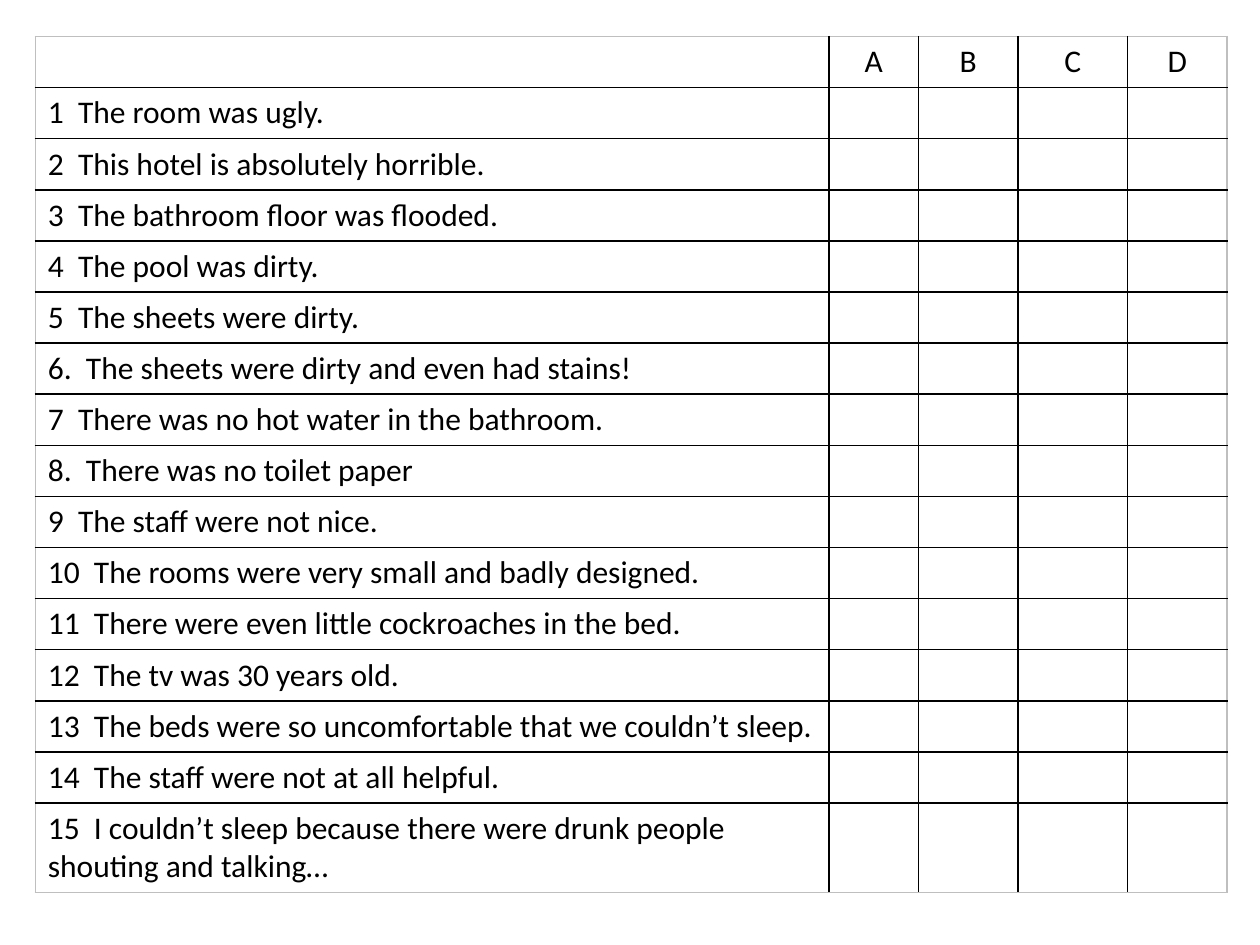
from dataclasses import dataclass

from lxml import etree
from pptx import Presentation
from pptx.dml.color import RGBColor
from pptx.enum import text
from pptx.oxml import ns
from pptx.util import Inches, Pt


@dataclass(frozen=True)
class Theme:
    """Hold the colours, font and sizes of the slide."""
    ink: str = "000000"
    frame: str = "BFBFBF"
    font: str = "Calibri"
    body: int = 18
    line: int = 1


THEME = Theme()
GUESTS = ["A", "B", "C", "D"]
COLUMN_WIDTHS = [6.3, 0.71, 0.79, 0.87, 0.79]
LAST_ROW_HEIGHT = 0.71
COMPLAINTS = [
    "1  The room was ugly.",
    "2  This hotel is absolutely horrible.",
    "3  The bathroom floor was flooded.",
    "4  The pool was dirty.",
    "5  The sheets were dirty.",
    "6.  The sheets were dirty and even had stains!",
    "7  There was no hot water in the bathroom.",
    "8.  There was no toilet paper",
    "9  The staff were not nice.",
    "10  The rooms were very small and badly designed.",
    "11  There were even little cockroaches in the bed.",
    "12  The tv was 30 years old.",
    "13  The beds were so uncomfortable that we couldn’t sleep.",
    "14  The staff were not at all helpful.",
    "15  I couldn’t sleep because there were drunk people shouting and talking…",
]


def write_cell(cell, words, align=text.PP_ALIGN.LEFT, anchor=text.MSO_ANCHOR.TOP):
    """Write formatted words into a cell."""
    cell.vertical_anchor = anchor
    para = cell.text_frame.paragraphs[0]
    para.alignment = align
    span = para.add_run()
    span.text = words
    span.font.name = THEME.font
    span.font.size = Pt(THEME.body)
    span.font.color.rgb = RGBColor.from_string(THEME.ink)


def draw_borders(cell, outer_sides):
    """Draw the four sides of a cell, using the frame colour on outer sides."""
    properties = cell._tc.get_or_add_tcPr()
    for position, side in enumerate(["L", "R", "T", "B"]):
        line = etree.Element(ns.qn(f"a:ln{side}"), w=str(Pt(THEME.line)))
        fill = etree.SubElement(line, ns.qn("a:solidFill"))
        colour = THEME.frame if side in outer_sides else THEME.ink
        etree.SubElement(fill, ns.qn("a:srgbClr"), val=colour)
        properties.insert(position, line)


def add_checklist(page, left, top, width, height):
    """Place the complaint checklist in the given box."""
    row_count, column_count = len(COMPLAINTS) + 1, len(GUESTS) + 1
    table = page.shapes.add_table(
        row_count, column_count,
        Inches(left), Inches(top), Inches(width), Inches(height)).table
    table.first_row = table.horz_banding = False

    for column, share in zip(table.columns, COLUMN_WIDTHS):
        column.width = Inches(width * share / sum(COLUMN_WIDTHS))
    for row in table.rows:
        row.height = Inches((height - LAST_ROW_HEIGHT) / (row_count - 1))
    table.rows[row_count - 1].height = Inches(LAST_ROW_HEIGHT)

    for column, guest in enumerate(GUESTS, 1):
        write_cell(table.cell(0, column), guest,
                   align=text.PP_ALIGN.CENTER, anchor=text.MSO_ANCHOR.MIDDLE)
    for row, complaint in enumerate(COMPLAINTS, 1):
        write_cell(table.cell(row, 0), complaint)

    for row in range(row_count):
        for column in range(column_count):
            cell = table.cell(row, column)
            cell.fill.background()
            edges = {"L": column == 0, "R": column == column_count - 1,
                     "T": row == 0, "B": row == row_count - 1}
            draw_borders(cell, [side for side, outer in edges.items() if outer])


def main():
    """Build and save the deck."""
    deck = Presentation()
    deck.slide_width, deck.slide_height = Inches(10), Inches(7.5)
    page = deck.slides.add_slide(deck.slide_layouts[6])
    add_checklist(page, left=0.28, top=0.29, width=9.46, height=6.79)
    deck.save("out.pptx")


if __name__ == "__main__":
    main()
